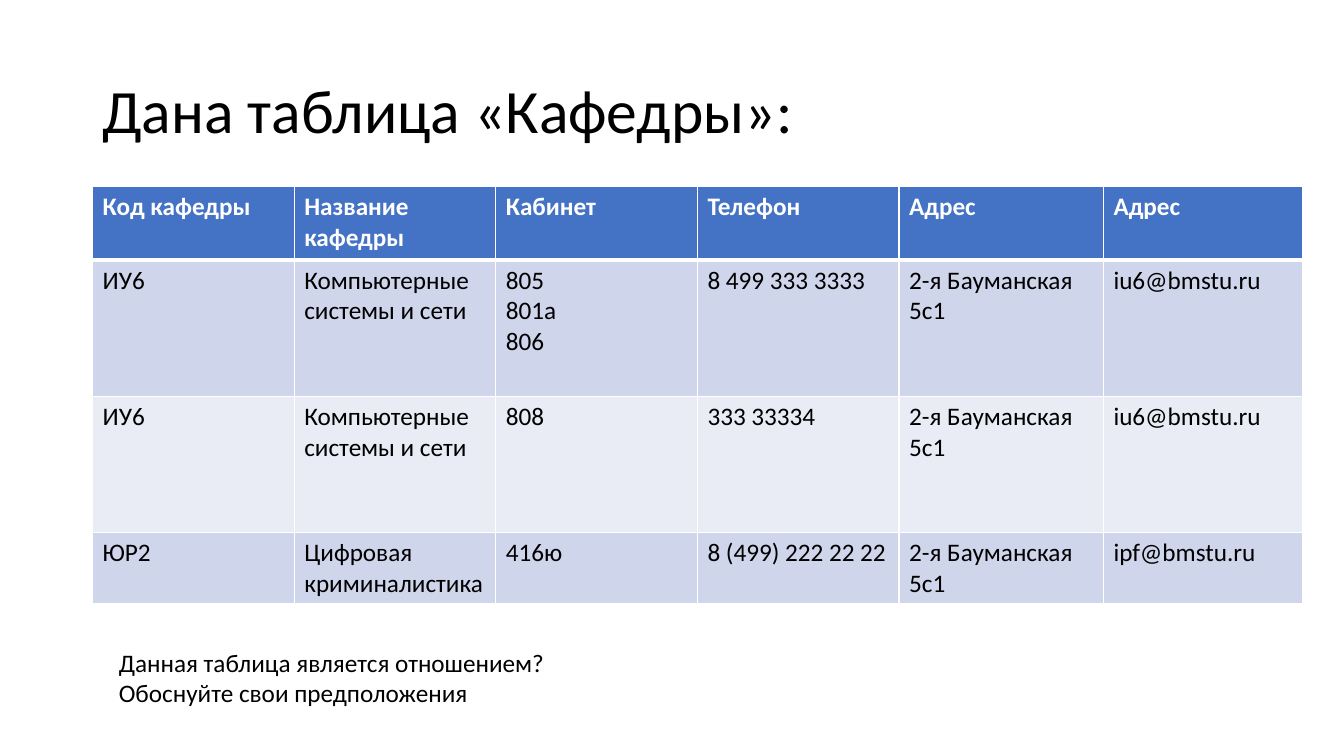
"""Build the slide with the table of university departments."""
from dataclasses import dataclass

from lxml import etree
from pptx import Presentation
from pptx.dml.color import RGBColor
from pptx.enum.text import MSO_ANCHOR
from pptx.oxml.ns import qn
from pptx.util import Pt

MIDDLE, TOP = MSO_ANCHOR.MIDDLE, MSO_ANCHOR.TOP


@dataclass(frozen=True)
class Theme:
    font: str = "Calibri"
    title: int = 44
    body: int = 18
    black: str = "000000"
    white: str = "FFFFFF"
    head: str = "4472C4"
    bands: tuple = ("CFD5EA", "E9EBF5")
    thin: int = 1
    thick: int = 3


theme = Theme()


def write(frame, text, size, color, bold=False):
    frame.text = text
    for para in frame.paragraphs:
        style = {"name": theme.font, "size": Pt(size), "bold": bold}
        for run in para.runs:
            for key, value in style.items():
                setattr(run.font, key, value)
            run.font.color.rgb = RGBColor.from_string(color)


def border(cell, widths):
    props = cell._tc.get_or_add_tcPr()
    for side, width in widths.items():
        line = etree.SubElement(props, qn(f"a:ln{side}"), w=str(Pt(width)))
        fill = etree.SubElement(line, qn("a:solidFill"))
        etree.SubElement(fill, qn("a:srgbClr"), val=theme.white)


deck = Presentation()
deck.slide_width, deck.slide_height = Pt(960), Pt(540)
slide = deck.slides.add_slide(deck.slide_layouts[6])

texts = [
    ("Дана таблица «Кафедры»:", (66, 28.8, 828, 104.4), theme.title, MIDDLE, 0.9),
    ("Данная таблица является отношением?\nОбоснуйте свои предположения",
     (77.8, 458.6, 416, 51), theme.body, TOP, 1.0),
]
for text, place, size, anchor, space in texts:
    frame = slide.shapes.add_textbox(*map(Pt, place)).text_frame
    frame.word_wrap = True
    frame.vertical_anchor = anchor
    write(frame, text, size, theme.black)
    for para in frame.paragraphs:
        para.line_spacing = space

name, street = "Компьютерные системы и сети", "2-я Бауманская 5с1"
rows = [
    ("Код кафедры", "Название кафедры", "Кабинет", "Телефон", "Адрес", "Адрес"),
    ("ИУ6", name, "805\n801а\n806", "8 499 333 3333", street, "iu6@bmstu.ru"),
    ("ИУ6", name, "808", "333 33334", street, "iu6@bmstu.ru"),
    ("ЮР2", "Цифровая криминалистика", "416ю", "8 (499) 222 22 22", street,
     "ipf@bmstu.ru"),
]
widths = [144, 144, 144, 144, 146, 142]
heights = [52.4, 97.4, 97.4, 50.4]

table = slide.shapes.add_table(
    len(rows), len(widths), Pt(66.2), Pt(133.4), Pt(sum(widths)), Pt(sum(heights))
).table
for col, width in zip(table.columns, widths):
    col.width = Pt(width)
for i, (row, height) in enumerate(zip(rows, heights)):
    table.rows[i].height = Pt(height)
    head = i == 0
    fill = theme.head if head else theme.bands[(i - 1) % 2]
    ink = theme.white if head else theme.black
    sides = {
        "L": theme.thin,
        "R": theme.thin,
        "T": theme.thick if i == 1 else theme.thin,
        "B": theme.thick if head else theme.thin,
    }
    for j, text in enumerate(row):
        cell = table.cell(i, j)
        border(cell, sides)
        cell.fill.solid()
        cell.fill.fore_color.rgb = RGBColor.from_string(fill)
        write(cell.text_frame, text, theme.body, ink, head)

deck.save("out.pptx")
